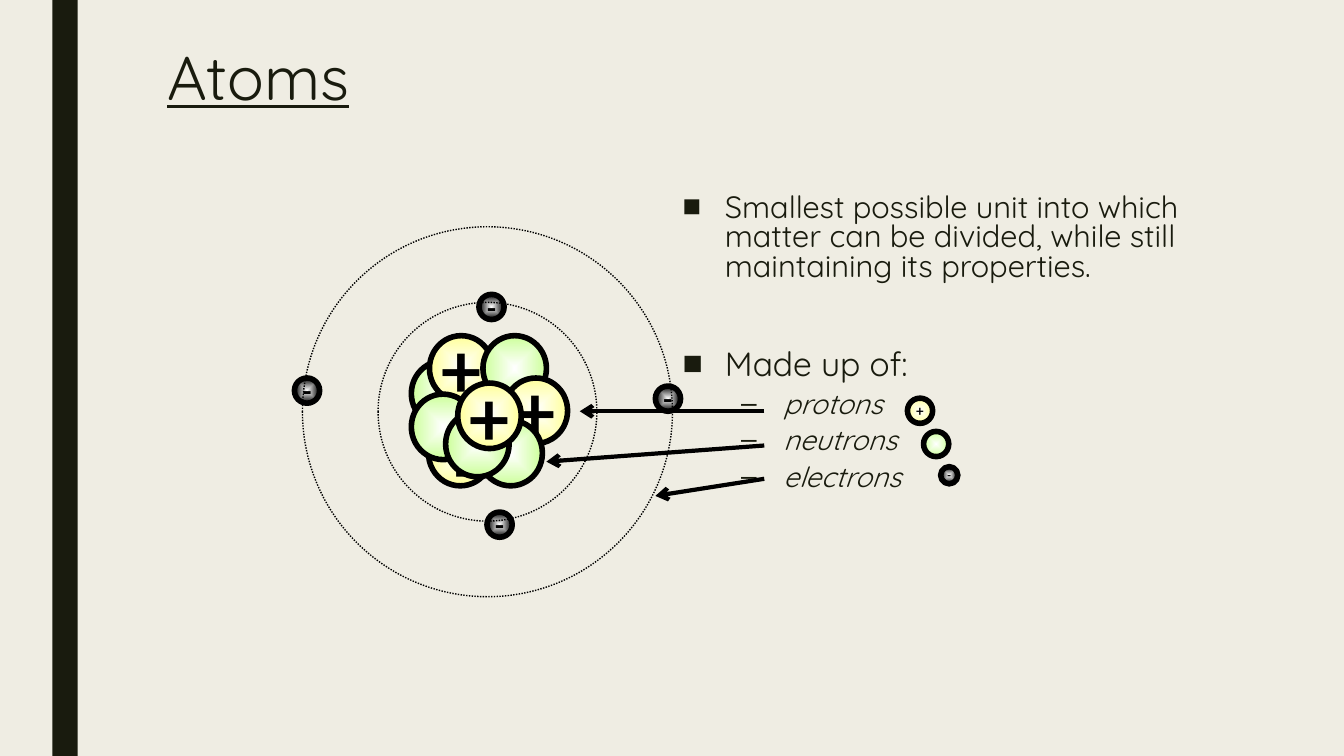
from dataclasses import dataclass

from lxml import etree
from pptx import Presentation
from pptx.dml.color import RGBColor
from pptx.enum.dml import MSO_LINE
from pptx.enum.shapes import MSO_CONNECTOR, MSO_SHAPE
from pptx.enum.text import MSO_ANCHOR, MSO_AUTO_SIZE, PP_ALIGN
from pptx.oxml.ns import qn
from pptx.util import Inches, Pt

OVAL, RECTANGLE = MSO_SHAPE.OVAL, MSO_SHAPE.RECTANGLE
STRAIGHT = MSO_CONNECTOR.STRAIGHT
DOTTED = MSO_LINE.ROUND_DOT
TOP, MIDDLE = MSO_ANCHOR.TOP, MSO_ANCHOR.MIDDLE
LEFT, CENTER = PP_ALIGN.LEFT, PP_ALIGN.CENTER
NO_FIT = MSO_AUTO_SIZE.NONE

COLORS = {
    "background": "EFEDE3",
    "ink": "191B0E",
    "black": "000000",
    "white": "FFFFFF",
    "proton": "FFFF99",
    "neutron": "CCFF99",
    "electron": "000000",
}
SIGNS = {"proton": "+", "neutron": "", "electron": "-"}
TEXT_FONT, SIGN_FONT = "Quicksand", "Lato"


@dataclass
class Particle:
    kind: str
    left: float
    top: float
    width: float = 0.25
    height: float = 0.25
    sign_size: int = 20


@dataclass
class Arrow:
    start: tuple[float, float]
    end: tuple[float, float]


@dataclass
class Bullet:
    text: str
    size: int
    level: int = 0
    before: int = 10


BULLETS = [
    Bullet("Smallest possible unit into which matter can be divided, "
           "while still maintaining its properties.", 22),
    Bullet("Made up of:", 24, before=46),
    *(Bullet(name, 20, level=1, before=5) for name in ("protons", "neutrons", "electrons")),
]
ARROWS = [
    Arrow((7.58, 4.08), (5.75, 4.08)),
    Arrow((7.58, 4.42), (5.42, 4.58)),
    Arrow((7.58, 4.75), (6.5, 4.92)),
]
LEGEND = [
    Particle("proton", 9, 3.95, sign_size=10),
    Particle("neutron", 9.16, 4.28),
    Particle("electron", 9.33, 4.63, 0.17, 0.17, sign_size=8),
]
NUCLEUS_BACK = [
    ("proton", 4.25, 4.17), ("neutron", 4.08, 3.58), ("proton", 4.26, 3.33),
    ("neutron", 4.79, 3.33), ("proton", 5, 3.75), ("neutron", 4.08, 3.91),
    ("neutron", 4.75, 4.17),
]
ELECTRONS = [(4.75, 2.92), (4.83, 5.08), (2.92, 3.75), (6.5, 3.83)]
NUCLEUS_FRONT = [("neutron", 4.42, 4.08), ("proton", 4.54, 3.8)]
ORBITS = [(3, 2.25, 3.67), (3.75, 3, 2.17)]  # left, top, diameter


def color(name: str) -> RGBColor:
    return RGBColor.from_string(COLORS[name])


def add_child(parent, tag: str, **attributes: str):
    return etree.SubElement(parent, qn(tag), attributes)


def write(para, text: str, *, size: int, font: str = TEXT_FONT, ink: str = "ink",
          bold: bool = False, italic: bool = False, underline: bool = False) -> None:
    span = para.add_run()
    span.text = text
    span.font.size = Pt(size)
    span.font.name = font
    span.font.color.rgb = color(ink)
    span.font.bold, span.font.italic, span.font.underline = bold, italic, underline


def place(box, left: float, top: float, width: float, height: float) -> None:
    box.left, box.top = Inches(left), Inches(top)
    box.width, box.height = Inches(width), Inches(height)
    frame = box.text_frame
    frame.auto_size, frame.vertical_anchor, frame.word_wrap = NO_FIT, TOP, True


def add_plain_shape(page, preset, left: float, top: float, width: float, height: float):
    shape = page.shapes.add_shape(preset, Inches(left), Inches(top), Inches(width), Inches(height))
    shape.shadow.inherit = False
    return shape


def fill_radial(shape, inner: str, outer: str) -> None:
    shape.fill.gradient()
    gradient = shape._element.spPr.find(qn("a:gradFill"))
    for child in list(gradient):
        gradient.remove(child)
    stops = add_child(gradient, "a:gsLst")
    for position, name in (("0", inner), ("100000", outer)):
        add_child(add_child(stops, "a:gs", pos=position), "a:srgbClr", val=COLORS[name])
    shade = add_child(gradient, "a:path", path="shape")
    add_child(shade, "a:fillToRect", l="50000", t="50000", r="50000", b="50000")


def add_particle(page, particle: Particle) -> None:
    ball = add_plain_shape(page, OVAL, particle.left, particle.top,
                           particle.width, particle.height)
    fill_radial(ball, "white", particle.kind)
    ball.line.color.rgb = color("black")
    ball.line.width = Pt(4)
    if SIGNS[particle.kind]:
        frame = ball.text_frame
        frame.word_wrap, frame.vertical_anchor = False, MIDDLE
        para = frame.paragraphs[0]
        para.alignment = CENTER
        write(para, SIGNS[particle.kind], size=particle.sign_size,
              font=SIGN_FONT, ink="black", bold=True)


def add_arrow(page, arrow: Arrow) -> None:
    points = [Inches(value) for value in (*arrow.start, *arrow.end)]
    connector = page.shapes.add_connector(STRAIGHT, *points)
    connector.line.color.rgb = color("black")
    connector.line.width = Pt(3)
    add_child(connector.line._get_or_add_ln(), "a:tailEnd", type="arrow")
    add_child(connector._element.spPr, "a:effectLst")


def add_bullet(para, bullet: Bullet) -> None:
    para.level = bullet.level
    para.alignment = LEFT
    para.line_spacing = 0.8
    para.space_before, para.space_after = Pt(bullet.before), Pt(2)
    properties = para._p.get_or_add_pPr()
    properties.set("marL", str(Inches(1 if bullet.level else 0.42)))
    properties.set("indent", str(Inches(-0.42)))
    add_child(properties, "a:buFont", typeface="Arial")
    add_child(properties, "a:buChar", char="–" if bullet.level else "■")
    write(para, bullet.text, size=bullet.size, italic=bullet.level > 0)


def main() -> None:
    deck = Presentation()
    deck.slide_width, deck.slide_height = Inches(13.33), Inches(7.5)
    page = deck.slides.add_slide(deck.slide_layouts[1])
    page.background.fill.solid()
    page.background.fill.fore_color.rgb = color("background")

    # Side bar
    bar = add_plain_shape(page, RECTANGLE, 0.52, 0, 0.25, 7.5)
    bar.fill.solid()
    bar.fill.fore_color.rgb = color("ink")
    bar.line.fill.background()

    # Title
    title = page.shapes.title
    place(title, 1.56, 0.42, 11.11, 1.25)
    heading = title.text_frame.paragraphs[0]
    heading.alignment, heading.line_spacing = LEFT, 0.89
    write(heading, "Atoms", size=44, underline=True)

    # Definition and list of parts
    body = page.placeholders[1]
    place(body, 6.67, 1.88, 5.47, 4.79)
    for index, bullet in enumerate(BULLETS):
        frame = body.text_frame
        add_bullet(frame.add_paragraph() if index else frame.paragraphs[0], bullet)

    # Arrows from the list to the atom
    for arrow in ARROWS:
        add_arrow(page, arrow)

    # Legend, nucleus and electrons, from back to front
    back, front = ([Particle(*spot, 0.63, 0.65, sign_size=54) for spot in layer]
                   for layer in (NUCLEUS_BACK, NUCLEUS_FRONT))
    electrons = [Particle("electron", *spot) for spot in ELECTRONS]
    for particle in LEGEND + back + electrons + front:
        add_particle(page, particle)

    # Orbits
    for left, top, diameter in ORBITS:
        orbit = add_plain_shape(page, OVAL, left, top, diameter, diameter)
        orbit.fill.background()
        orbit.line.color.rgb = color("black")
        orbit.line.width = Pt(1)
        orbit.line.dash_style = DOTTED

    deck.save("out.pptx")


if __name__ == "__main__":
    main()
